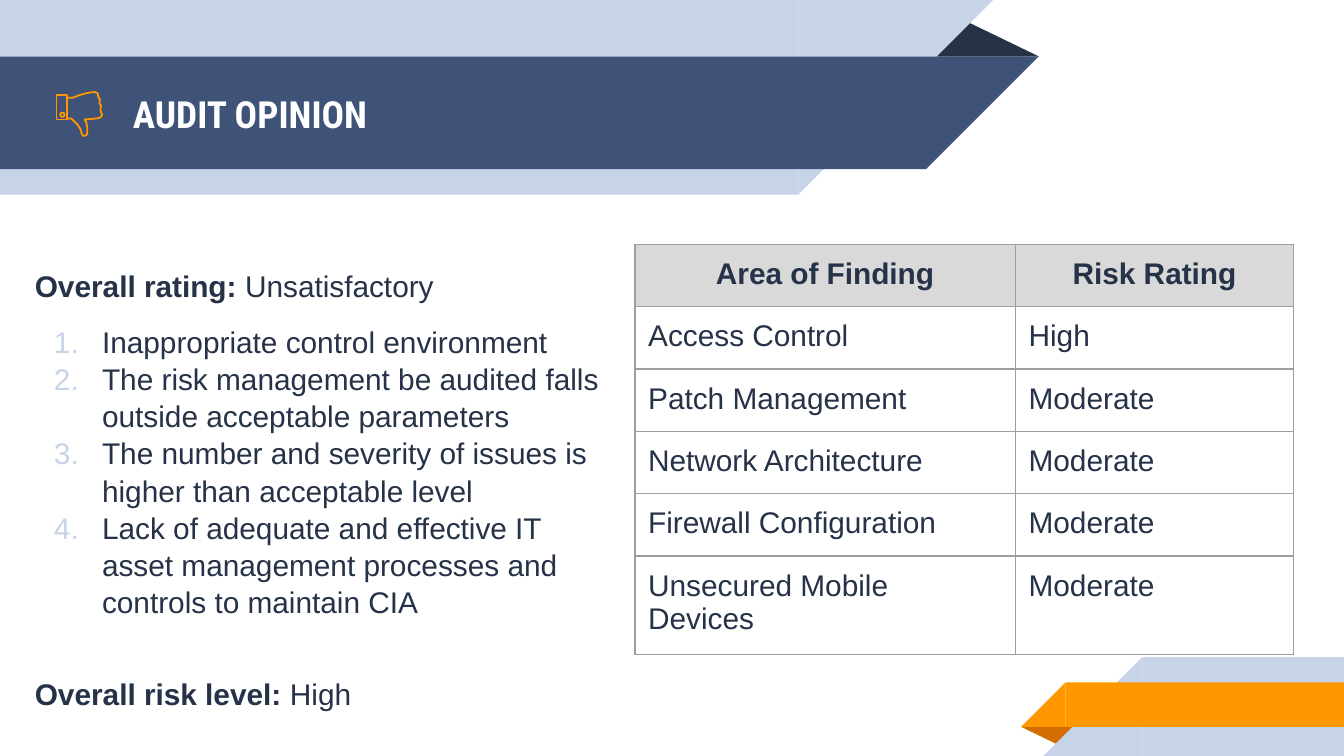
from dataclasses import dataclass

from lxml import etree
from pptx import Presentation
from pptx.dml.color import RGBColor
from pptx.enum.shapes import MSO_SHAPE
from pptx.enum.text import MSO_ANCHOR, PP_ALIGN
from pptx.oxml.ns import qn
from pptx.util import Cm, Pt

RECT, CORNER = MSO_SHAPE.RECTANGLE, MSO_SHAPE.RIGHT_TRIANGLE
FOLD, OVAL = MSO_SHAPE.ISOSCELES_TRIANGLE, MSO_SHAPE.OVAL
TOP, MIDDLE = MSO_ANCHOR.TOP, MSO_ANCHOR.MIDDLE
LEFT, CENTER = PP_ALIGN.LEFT, PP_ALIGN.CENTER


@dataclass(frozen=True)
class Theme:
    ink: str = "263248"
    navy: str = "3F5378"
    pale: str = "C7D3E6"
    orange: str = "FF9800"
    rust: str = "D26F00"
    white: str = "FFFFFF"
    header: str = "D9D9D9"
    border: str = "9E9E9E"
    heading_font: str = "Roboto Condensed"
    body_font: str = "Arial"
    heading_size: int = 20
    body_size: int = 16


theme = Theme()


def add_block(kind, left, top, width, height, fill, flip=None):
    block = slide.shapes.add_shape(kind, Cm(left), Cm(top), Cm(width), Cm(height))
    block.shadow.inherit = False
    if fill:
        block.fill.solid()
        block.fill.fore_color.rgb = RGBColor.from_string(fill)
        block.line.fill.background()
    else:
        block.fill.background()
    if flip:
        block._element.spPr.find(qn("a:xfrm")).set(flip, "1")
    return block


def set_font(font, name, size, color, bold=None):
    font.name, font.size, font.bold = name, Pt(size), bold
    font.color.rgb = RGBColor.from_string(color)


prs = Presentation()
prs.slide_width, prs.slide_height = Cm(25.4), Cm(14.29)
slide = prs.slides.add_slide(prs.slide_layouts[6])

header_fold = add_block(FOLD, 17.48, 0.36, 2.16, 0.71, theme.ink)
header_fold.adjustments[0] = 0.32
for top, width, height, color in [(0, 15.09, 3.68, theme.pale), (1.07, 17.5, 2.13, theme.navy)]:
    add_block(RECT, 0, top, width, height, color)
    add_block(CORNER, width, top, height, height, color, "flipV")

footer_fold = add_block(FOLD, 19.3, 13.74, 1.09, 0.36, theme.rust)
footer_fold.rotation = 180
footer_fold.adjustments[0] = 0.32
for left, top, height, color in [(21.59, 12.42, 1.87, theme.pale), (20.14, 12.9, 0.84, theme.orange)]:
    add_block(RECT, left, top, 25.4 - left, height, color)
    add_block(CORNER, left - height, top, height, height, color, "flipH")

title = slide.shapes.add_textbox(Cm(2.26), Cm(1.09), Cm(15.27), Cm(2.13)).text_frame
title.word_wrap = True
title.vertical_anchor = MIDDLE
title.text = "AUDIT OPINION"
set_font(title.paragraphs[0].font, theme.heading_font, theme.heading_size, theme.white, True)

opinion = slide.shapes.add_textbox(Cm(0.41), Cm(2.36), Cm(11.33), Cm(12.8)).text_frame
opinion.word_wrap = True
opinion.vertical_anchor = TOP
opinion.margin_top = Cm(2.67)
opinion_lines = [
    ("Overall rating:", " Unsatisfactory", 0),
    ("", "Inappropriate control environment", 10),
    ("", "The risk management be audited falls outside acceptable parameters", 0),
    ("", "The number and severity of issues is higher than acceptable level", 0),
    ("", "Lack of adequate and effective IT asset management processes and controls to maintain CIA", 0),
    ("Overall risk level:", " High", 29),
]
for index, (label, wording, space) in enumerate(opinion_lines):
    line = opinion.add_paragraph() if index else opinion.paragraphs[0]
    line.space_before = Pt(space)
    line.line_spacing = 1.04
    set_font(line.font, theme.body_font, theme.body_size, theme.ink)
    if label:
        lead = line.add_run()
        lead.text = label
        lead.font.bold = True
    else:
        numbering = line._p.get_or_add_pPr()
        numbering.set("marL", str(Cm(1.27)))
        numbering.set("indent", str(-Cm(0.91)))
        number_color = etree.SubElement(numbering, qn("a:buClr"))
        etree.SubElement(number_color, qn("a:srgbClr"), val=theme.pale)
        etree.SubElement(numbering, qn("a:buAutoNum"), type="arabicPeriod")
        numbering.append(numbering.find(qn("a:defRPr")))
    line.add_run().text = wording

findings = [
    ("Area of Finding", "Risk Rating"),
    ("Access Control", "High"),
    ("Patch Management", "Moderate"),
    ("Network Architecture", "Moderate"),
    ("Firewall Configuration", "Moderate"),
    ("Unsecured Mobile Devices", "Moderate"),
]
ratings = slide.shapes.add_table(len(findings), 2, Cm(12), Cm(4.62), Cm(12.45), Cm(7.4)).table
ratings.columns[0].width, ratings.columns[1].width = Cm(7.19), Cm(5.26)
for row, finding in enumerate(findings):
    ratings.rows[row].height = Cm(1.75 if row == len(findings) - 1 else 1.13)
    for column, wording in enumerate(finding):
        cell = ratings.cell(row, column)
        cell.margin_left = cell.margin_right = cell.margin_top = cell.margin_bottom = Cm(0.25)
        cell.text = wording
        entry = cell.text_frame.paragraphs[0]
        entry.alignment = LEFT if row else CENTER
        set_font(entry.font, theme.body_font, theme.body_size, theme.ink, row == 0)
        for side in ("a:lnL", "a:lnR", "a:lnT", "a:lnB"):
            edge = etree.SubElement(cell._tc.get_or_add_tcPr(), qn(side), w=str(Pt(0.75)))
            edge_fill = etree.SubElement(edge, qn("a:solidFill"))
            etree.SubElement(edge_fill, qn("a:srgbClr"), val=theme.border)
        if row:
            cell.fill.background()
        else:
            cell.fill.solid()
            cell.fill.fore_color.rgb = RGBColor.from_string(theme.header)

cuff = add_block(RECT, 1.07, 1.8, 0.2, 0.46, None)
button = add_block(OVAL, 1.14, 2.13, 0.08, 0.08, None)
hand_outline = [
    (127, 185), (137, 185), (147, 181), (160, 177), (170, 175), (180, 174), (185, 177),
    (186, 184), (189, 188), (188, 195), (191, 200), (190, 208), (191, 212), (193, 218),
    (190, 222), (183, 224), (160, 226), (163, 231), (165, 241), (165, 252), (163, 256),
    (158, 257), (155, 254), (152, 244), (147, 236), (140, 229), (135, 224), (127, 224),
]
hand_builder = slide.shapes.build_freeform(*hand_outline[0], scale=Cm(0.01))
hand_builder.add_line_segments(hand_outline[1:], close=False)
hand = hand_builder.convert_to_shape()
hand.shadow.inherit = False
hand.fill.background()
for part in (cuff, button, hand):
    part.line.color.rgb = RGBColor.from_string(theme.orange)
    part.line.width = Pt(0.96)

prs.save("out.pptx")
